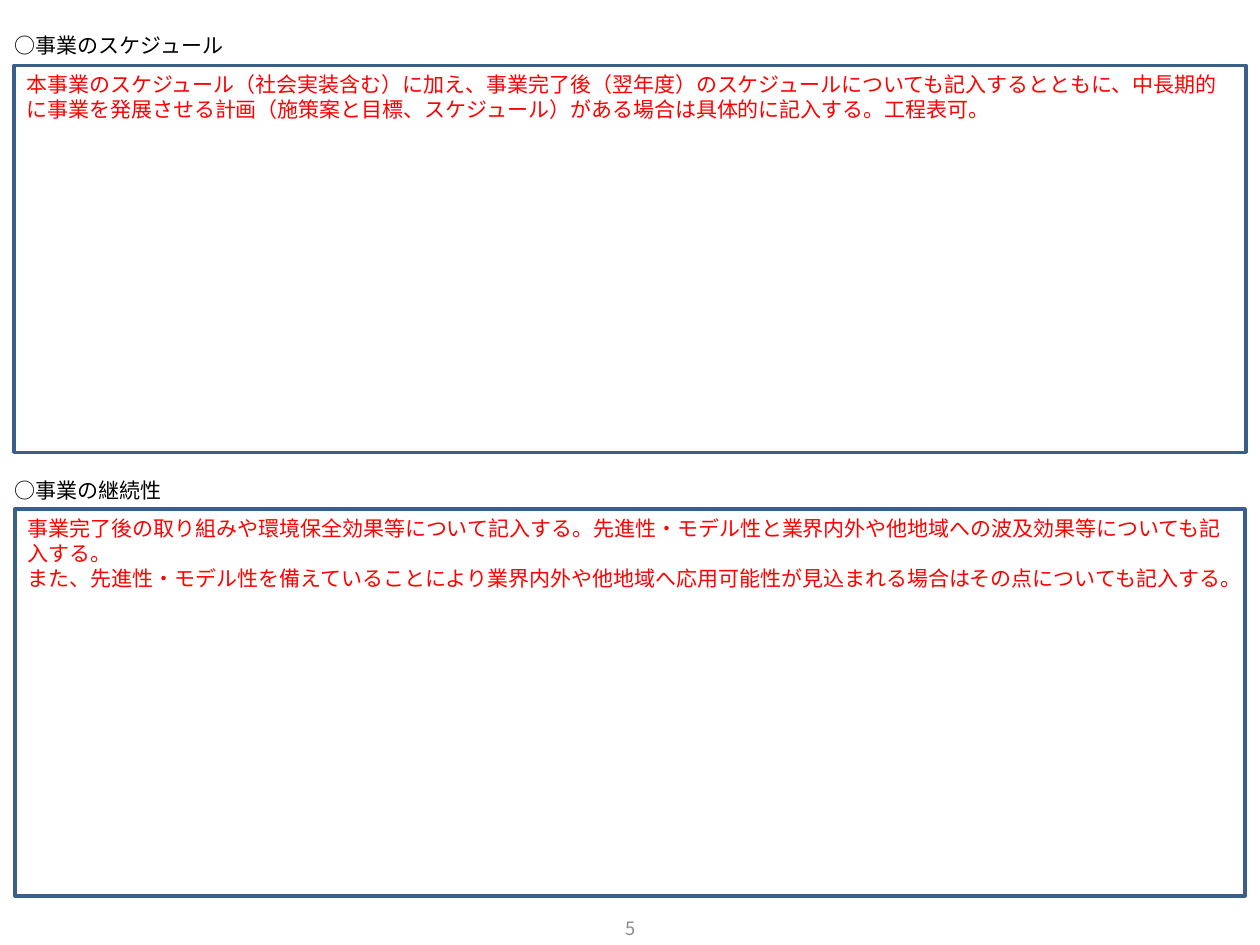
from dataclasses import dataclass

from lxml import etree
from pptx import Presentation
from pptx.dml.color import RGBColor
from pptx.enum.shapes import MSO_SHAPE
from pptx.enum.text import MSO_ANCHOR, PP_ALIGN
from pptx.oxml.ns import qn
from pptx.util import Inches, Pt

RECT = MSO_SHAPE.RECTANGLE
TOP, MIDDLE = MSO_ANCHOR.TOP, MSO_ANCHOR.MIDDLE
LEFT, CENTER = PP_ALIGN.LEFT, PP_ALIGN.CENTER

FONT = "Noto Sans CJK JP"
BLACK, RED, BLUE, GRAY = "000000", "FF0000", "3A5F8C", "8C8C8C"
LINE_SPACING = 1.2  # multiple of the text size
LABEL_HEIGHT = 0.3
FRAME_HEIGHT = 3.07


@dataclass
class Section:
    heading: str
    heading_top: float
    heading_width: float
    frame_left: float
    frame_top: float
    notes: list[str]


SECTIONS = [
    Section("○事業のスケジュール", 0.21, 1.91, 0.11, 0.52, [
        "本事業のスケジュール（社会実装含む）に加え、事業完了後（翌年度）のスケジュールについても"
        "記入するとともに、中長期的に事業を発展させる計画（施策案と目標、スケジュール）がある場合は"
        "具体的に記入する。工程表可。",
    ]),
    Section("○事業の継続性", 3.74, 5.12, 0.12, 4.04, [
        "事業完了後の取り組みや環境保全効果等について記入する。先進性・モデル性と業界内外や"
        "他地域への波及効果等についても記入する。",
        "また、先進性・モデル性を備えていることにより業界内外や他地域へ応用可能性が見込まれる場合は"
        "その点についても記入する。",
    ]),
]


def rgb(color: str) -> RGBColor:
    return RGBColor.from_string(color)


def write(sp, lines: list[str], color: str, size: float = 12,
          align=LEFT, anchor=TOP) -> None:
    """Fill a shape with one paragraph per line, in Latin and East Asian font."""
    tf = sp.text_frame
    tf.word_wrap = True
    tf.vertical_anchor = anchor
    for i, line in enumerate(lines):
        p = tf.add_paragraph() if i else tf.paragraphs[0]
        p.alignment = align
        p.line_spacing = Pt(size * LINE_SPACING)
        r = p.add_run()
        r.text = line
        for name, value in {"name": FONT, "size": Pt(size)}.items():
            setattr(r.font, name, value)
        r.font.color.rgb = rgb(color)
        etree.SubElement(r.font._element, qn("a:ea"), typeface=FONT)


def add_label(s, text: str, left: float, top: float, width: float,
              height: float, color: str, **text_format) -> None:
    sp = s.shapes.add_textbox(*map(Inches, (left, top, width, height)))
    write(sp, [text], color, **text_format)


def add_frame(s, section: Section, slide_width: float) -> None:
    """Draw the outlined box of a section, centred across the slide."""
    left = section.frame_left
    sp = s.shapes.add_shape(RECT, *map(Inches, (
        left, section.frame_top, slide_width - 2 * left, FRAME_HEIGHT)))
    sp.shadow.inherit = False
    sp.fill.background()
    sp.line.color.rgb = rgb(BLUE)
    sp.line.width = Pt(2)
    write(sp, section.notes, RED)


def main() -> None:
    prs = Presentation()
    prs.slide_width, prs.slide_height = Inches(10), Inches(7.5)
    s = prs.slides.add_slide(prs.slide_layouts[6])
    for section in SECTIONS:
        add_label(s, section.heading, 0.02, section.heading_top,
                  section.heading_width, LABEL_HEIGHT, BLACK)
        add_frame(s, section, prs.slide_width.inches)
    add_label(s, "5", 4.67, 7.25, 0.67, 0.24, GRAY,
              size=10.5, align=CENTER, anchor=MIDDLE)
    prs.save("out.pptx")


if __name__ == "__main__":
    main()
